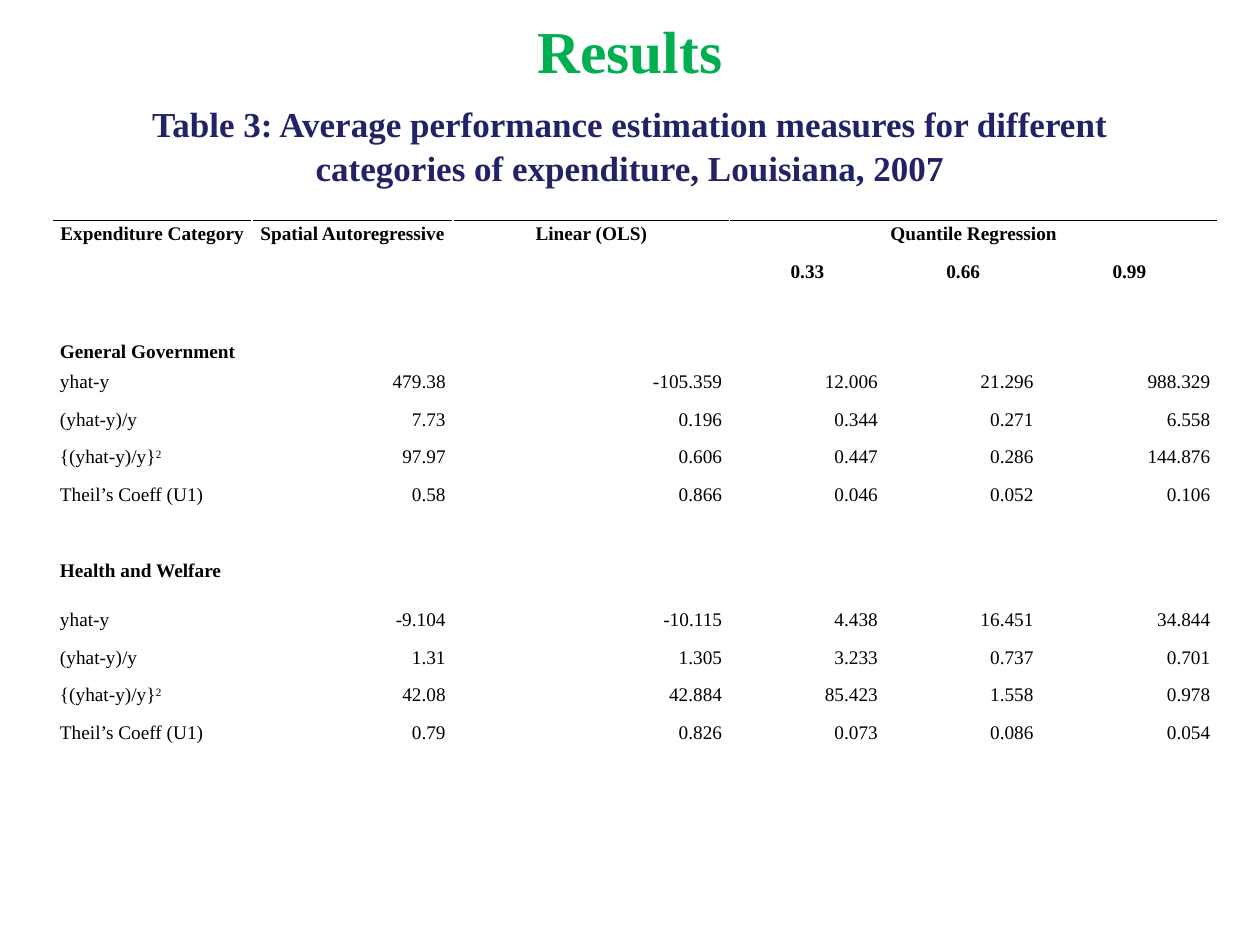
import pptx
import pptx.util
import pptx.dml.color
import pptx.enum.text
import pptx.oxml.ns
import lxml.etree

Pt = pptx.util.Pt
ALIGN = pptx.enum.text.PP_ALIGN
ANCHOR = pptx.enum.text.MSO_ANCHOR
qn = pptx.oxml.ns.qn

COLORS = {"title": "00B050", "caption": "222267", "text": "000000"}
COLS = [114, 115, 158, 89, 89, 101]
ROWS = [21.6] * 2 + [23.8, 17.3] + [21.6] * 5 + [28] + [21.6] * 4
MEASURES = [["yhat-y"], ["(yhat-y)/y"], ["{(yhat-y)/y}", "2"], ["Theil’s Coeff (U1)"]]
HEADS = ["Expenditure Category", "Spatial Autoregressive", "Linear (OLS)",
         "Quantile Regression"]
LEVELS = ["0.33", "0.66", "0.99"]
SPANS = [(0, 0, 2, 0), (0, 1, 1, 1), (0, 2, 1, 2), (0, 3, 0, 5)]
# Each group: row of its heading, name, values by measure
GROUPS = [
    (3, "General Government", [
        ["479.38", "-105.359", "12.006", "21.296", "988.329"],
        ["7.73", "0.196", "0.344", "0.271", "6.558"],
        ["97.97", "0.606", "0.447", "0.286", "144.876"],
        ["0.58", "0.866", "0.046", "0.052", "0.106"]]),
    (9, "Health and Welfare", [
        ["-9.104", "-10.115", "4.438", "16.451", "34.844"],
        ["1.31", "1.305", "3.233", "0.737", "0.701"],
        ["42.08", "42.884", "85.423", "1.558", "0.978"],
        ["0.79", "0.826", "0.073", "0.086", "0.054"]]),
]


class Deck:
    def __init__(self, slide):
        self.slide = slide
        self.face = "Times New Roman"
        self.size = 11
        self.inset = 4.3

    def run(self, para, text, size, color, bold, raised=False):
        run = para.add_run()
        run.text = text
        font = run.font
        font.name, font.size, font.bold = self.face, Pt(size), bold
        font.color.rgb = pptx.dml.color.RGBColor.from_string(COLORS[color])
        if raised:
            font._element.set("baseline", "30000")

    def text(self, box, text, size, color, anchor, spacing):
        frame = self.slide.shapes.add_textbox(*map(Pt, box)).text_frame
        frame.word_wrap = True
        frame.vertical_anchor = anchor
        para = frame.paragraphs[0]
        para.alignment = ALIGN.CENTER
        para.line_spacing = spacing
        self.run(para, text, size, color, True)

    def table(self, left, top, cols, rows):
        """Add a plain table whose empty cells also keep the small text size."""
        frame = self.slide.shapes.add_table(
            len(rows), len(cols), Pt(left), Pt(top), Pt(sum(cols)), Pt(sum(rows)))
        table = frame.table
        table.first_row = table.horz_banding = False
        for col, width in zip(table.columns, cols):
            col.width = Pt(width)
        for row, height in zip(table.rows, rows):
            row.height = Pt(height)
        for cell in table.iter_cells():
            cell.margin_left = cell.margin_right = Pt(self.inset)
            cell.margin_top = cell.margin_bottom = 0
            end = lxml.etree.SubElement(
                cell.text_frame.paragraphs[0]._p, qn("a:endParaRPr"))
            end.set("sz", str(self.size * 100))
        for col in range(len(cols)):
            self.rule(table.cell(0, col))
            table.cell(0, col).fill.background()
        for cell in table.iter_cells():
            cell.fill.background()
        return table

    def rule(self, cell):
        """Draw a line along the top of a cell."""
        props = cell._tc.get_or_add_tcPr()
        line = lxml.etree.SubElement(props, qn("a:lnT"), w=str(Pt(1)))
        fill = lxml.etree.SubElement(line, qn("a:solidFill"))
        lxml.etree.SubElement(fill, qn("a:srgbClr"), val=COLORS["text"])

    def cell(self, cell, parts, align, bold=False):
        """Write text parts into a cell; any part after the first is raised."""
        para = cell.text_frame.paragraphs[0]
        para.alignment = align
        para.line_spacing = 1.15
        for i, part in enumerate(parts):
            self.run(para, part, self.size, "text", bold, raised=i > 0)


def main():
    show = pptx.Presentation()
    show.slide_width, show.slide_height = Pt(720), Pt(540)
    deck = Deck(show.slides.add_slide(show.slide_layouts[6]))

    deck.text((36, 9.4, 648, 38), "Results", 34, "title", ANCHOR.MIDDLE, 1)
    deck.text((36, 54, 648, 48),
              "Table 3: Average performance estimation measures for different "
              "categories of expenditure, Louisiana, 2007",
              20, "caption", ANCHOR.TOP, 1.05)

    table = deck.table(30, 126, COLS, ROWS)
    for top, left, low, right in SPANS:
        table.cell(top, left).merge(table.cell(low, right))
    for col, head in enumerate(HEADS):
        deck.cell(table.cell(0, col), [head], ALIGN.CENTER, True)
    for col, level in enumerate(LEVELS, 3):
        deck.cell(table.cell(1, col), [level], ALIGN.CENTER, True)
    for top, name, grid in GROUPS:
        deck.cell(table.cell(top, 0), [name], ALIGN.LEFT, True)
        for row, (label, values) in enumerate(zip(MEASURES, grid), top + 1):
            deck.cell(table.cell(row, 0), label, ALIGN.LEFT)
            for col, value in enumerate(values, 1):
                deck.cell(table.cell(row, col), [value], ALIGN.RIGHT)

    show.save("out.pptx")


if __name__ == "__main__":
    main()
